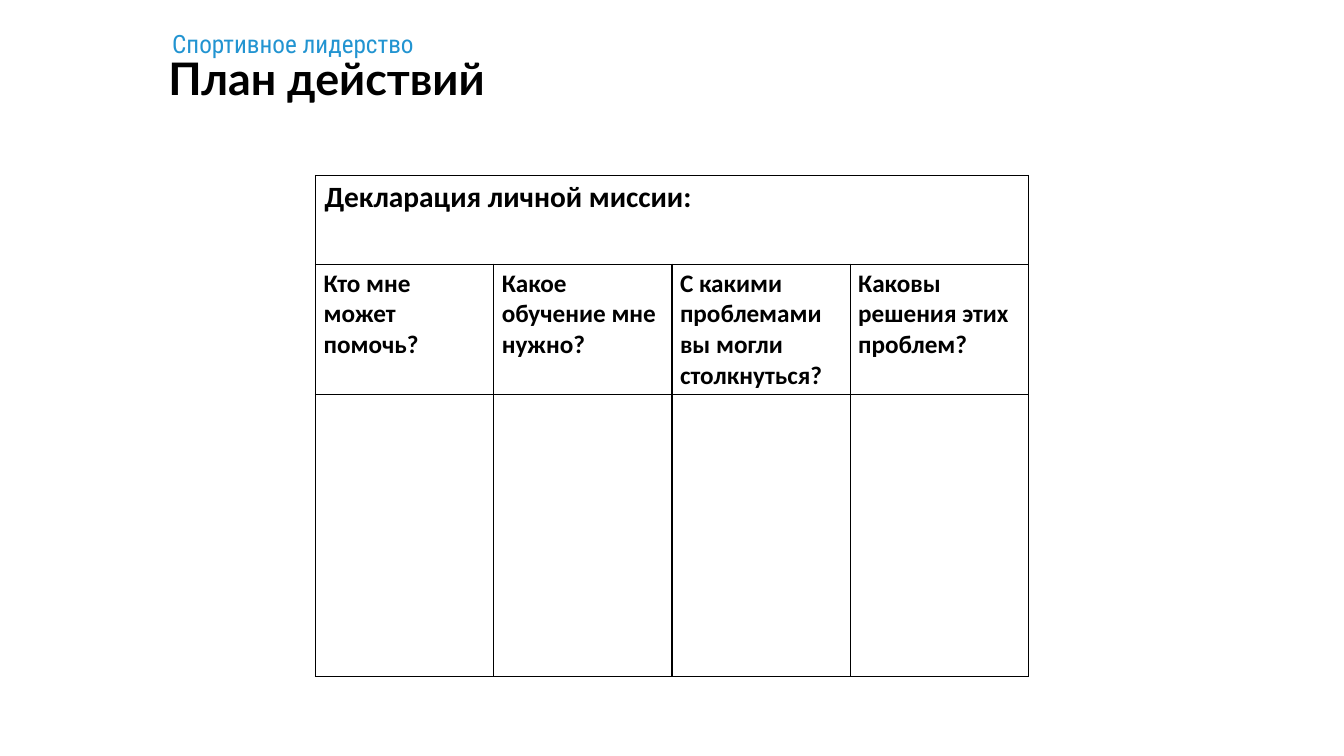
from lxml import etree
from pptx import Presentation
from pptx.dml.color import RGBColor
from pptx.enum import text as t
from pptx.oxml import ns
from pptx.util import Inches, Pt

TOPIC = "Спортивное лидерство"
TITLE = "План действий"
MISSION = "Декларация личной миссии:"
ASKS = [
    "Кто мне может помочь?",
    "Какое обучение мне нужно?",
    "С какими проблемами вы могли столкнуться?",
    "Каковы решения этих проблем?",
]
ROWS = [0.88, 1.29, 2.8]
WIDTH = 7.07
BLACK = RGBColor(0, 0, 0)
BLUE = RGBColor(0x22, 0x94, 0xD1)


def write(par, words, face, size, color, bold):
    par.text = words
    font = par.font
    font.name, font.size, font.bold = face, Pt(size), bold
    font.color.rgb = color


def border(cell):
    props = cell._tc.get_or_add_tcPr()
    for place, side in enumerate(("lnL", "lnR", "lnT", "lnB")):
        line = etree.Element(ns.qn("a:" + side), w=str(Pt(0.96)))
        fill = etree.SubElement(line, ns.qn("a:solidFill"))
        etree.SubElement(fill, ns.qn("a:srgbClr"), val=str(BLACK))
        props.insert(place, line)


def main():
    deck = Presentation()
    deck.slide_width, deck.slide_height = Inches(13.33), Inches(7.5)
    slide = deck.slides.add_slide(deck.slide_layouts[5])

    topic = slide.shapes.add_textbox(
        Inches(1.61), Inches(0.23), Inches(2.85), Inches(0.4))
    topic.text_frame.word_wrap = False
    write(topic.text_frame.paragraphs[0], TOPIC, "Roboto Condensed", 18, BLUE, False)

    title = slide.shapes.title
    title.left, title.top = Inches(1.57), Inches(0.5)
    title.width, title.height = Inches(9.46), Inches(0.61)
    frame = title.text_frame
    frame.vertical_anchor = t.MSO_ANCHOR.MIDDLE
    frame.auto_size = t.MSO_AUTO_SIZE.NONE
    head = frame.paragraphs[0]
    write(head, TITLE, "Lato", 32, BLACK, True)
    head.alignment = t.PP_ALIGN.LEFT
    head.line_spacing = 0.9

    table = slide.shapes.add_table(
        len(ROWS), len(ASKS), Inches(3.13), Inches(1.74),
        Inches(WIDTH), Inches(sum(ROWS))).table
    table.first_row = table.horz_banding = False
    for row, high in zip(table.rows, ROWS):
        row.height = Inches(high)
    for col in table.columns:
        col.width = Inches(WIDTH / len(ASKS))
    for cell in table.iter_cells():
        cell.fill.background()
        cell.margin_left = cell.margin_right = Inches(0.08)
        cell.margin_top = cell.margin_bottom = Inches(0.04)
        border(cell)

    top = table.cell(0, 0)
    top.merge(table.cell(0, len(ASKS) - 1))
    top.margin_left = top.margin_right = Inches(0.09)
    write(top.text_frame.paragraphs[0], MISSION, "Calibri", 21, BLACK, True)
    for col, ask in enumerate(ASKS):
        par = table.cell(1, col).text_frame.paragraphs[0]
        write(par, ask, "Calibri", 18, BLACK, True)

    deck.save("out.pptx")


if __name__ == "__main__":
    main()
